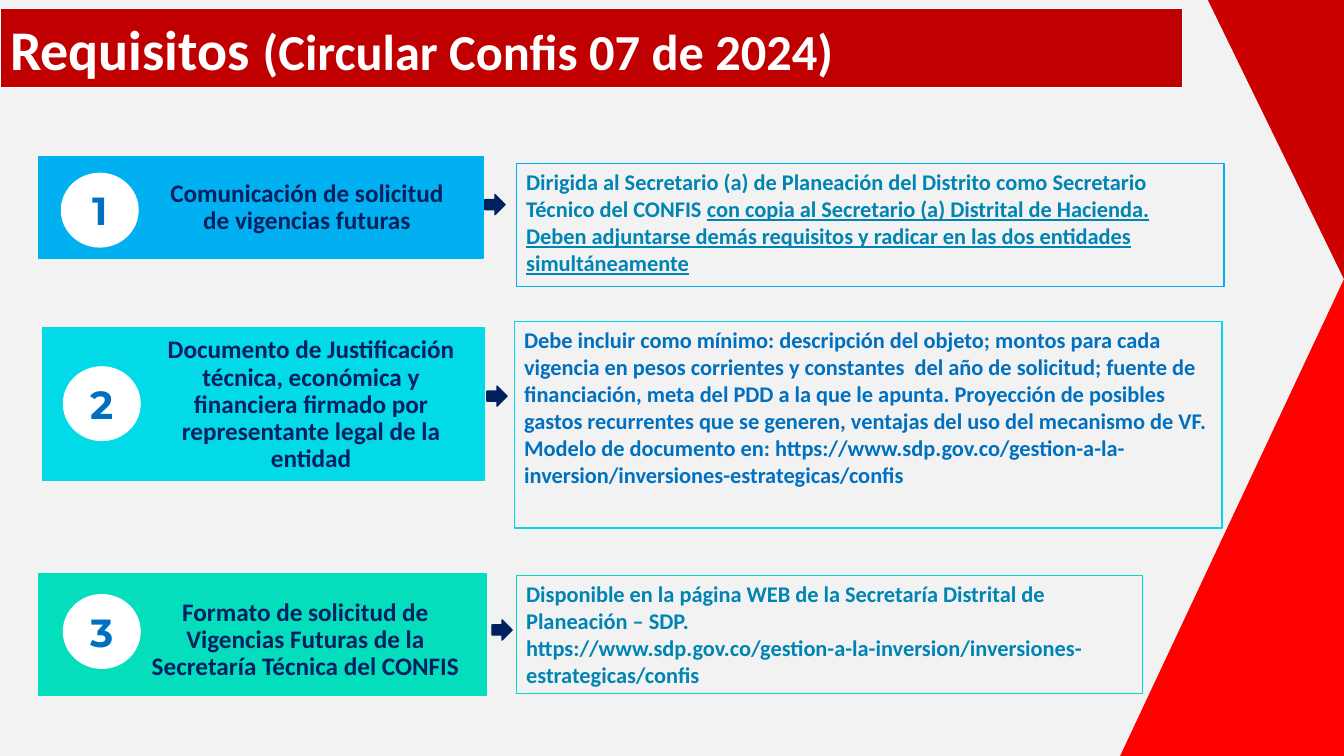
from pptx import Presentation
from pptx.dml.color import RGBColor
from pptx.enum.shapes import MSO_SHAPE
from pptx.enum.text import MSO_ANCHOR, MSO_AUTO_SIZE, PP_ALIGN
from pptx.util import Emu, Pt

PX = 9144  # 100 px to the inch

COLORS = {
    "background": "F2F2F2",
    "banner": "C00000",
    "upper_red": "CC0000",
    "lower_red": "FF0000",
    "white": "FFFFFF",
    "navy": "002060",
    "blue": "0070C0",
    "teal": "0084B4",
    "sky": "00B0F0",
    "cyan": "02DAE7",
    "mint": "04DEBD",
}

# Each detail is a list of paragraphs, each a list of (text, underlined) spans
REQUIREMENTS = [
    dict(
        number="1", color="sky", ink="teal",
        card=(38, 155, 441, 101), label=(150, 168, 305, 76),
        badge=(61, 172), arrow=(481, 193), frame=(512, 162, 702, 122),
        name="Comunicación de solicitud de vigencias futuras",
        detail=[
            [("Dirigida al Secretario (a) de Planeación del Distrito como "
              "Secretario Técnico del CONFIS ", False),
             ("con copia al Secretario (a) Distrital de Hacienda.", True)],
            [("Deben adjuntarse demás requisitos y radicar en las dos "
              "entidades simultáneamente", True)],
        ],
    ),
    dict(
        number="2", color="cyan", ink="blue",
        card=(42, 325, 438, 152), label=(152, 326, 309, 152),
        badge=(63, 364), arrow=(483, 383), frame=(510, 319, 702, 205),
        name="Documento de Justificación técnica, económica y financiera "
             "firmado por representante legal de la entidad",
        detail=[
            [("Debe incluir como mínimo: descripción del objeto; montos para "
              "cada vigencia en pesos corrientes y constantes  del año de "
              "solicitud; fuente de financiación, meta del PDD a la que le "
              "apunta. Proyección de posibles gastos recurrentes que se "
              "generen, ventajas del uso del mecanismo de VF.", False)],
            [("Modelo de documento en: https://www.sdp.gov.co/gestion-a-la-"
              "inversion/inversiones-estrategicas/confis", False)],
        ],
    ),
    dict(
        number="3", color="mint", ink="teal",
        card=(38, 569, 444, 121), label=(136, 571, 330, 129),
        badge=(63, 590), arrow=(488, 615), frame=(512, 571, 621, 117),
        name="Formato de solicitud de Vigencias Futuras de la Secretaría "
             "Técnica del CONFIS",
        detail=[
            [("Disponible en la página WEB de la Secretaría Distrital de "
              "Planeación – SDP.", False)],
            [("https://www.sdp.gov.co/gestion-a-la-inversion/inversiones-"
              "estrategicas/confis", False)],
        ],
    ),
]


def rgb(name):
    return RGBColor.from_string(COLORS[name])


def px(*lengths):
    return [Emu(length * PX) for length in lengths]


def style_font(font, size, color, family="Calibri"):
    font.name, font.size, font.bold = family, Pt(size), True
    font.color.rgb = rgb(color)


def add_block(page, kind, place, fill=None, line=None):
    block = page.shapes.add_shape(kind, *px(*place))
    block.shadow.inherit = False
    if fill:
        block.fill.solid()
        block.fill.fore_color.rgb = rgb(fill)
    else:
        block.fill.background()
    if line:
        block.line.color.rgb = rgb(line)
        block.line.width = Pt(1)
    else:
        block.line.fill.background()
    return block


def add_side_triangles(page):
    lower = add_block(page, MSO_SHAPE.RIGHT_TRIANGLE, (1111, 277, 222, 473), "lower_red")
    lower._element.spPr.get_or_add_xfrm().set("flipH", "1")
    upper = add_block(page, MSO_SHAPE.RIGHT_TRIANGLE, (1198, 0, 135, 277), "upper_red")
    upper.rotation = 180


def add_title(page):
    title = page.shapes.title
    title.left, title.top, title.width, title.height = px(0, 8, 1173, 79)
    title.fill.solid()
    title.fill.fore_color.rgb = rgb("banner")
    title.line.color.rgb = rgb("white")
    title.line.width = Pt(0.75)
    frame = title.text_frame
    frame.auto_size = MSO_AUTO_SIZE.NONE
    frame.vertical_anchor = MSO_ANCHOR.MIDDLE
    para = frame.paragraphs[0]
    para.alignment = PP_ALIGN.LEFT
    for text, size in (("Requisitos ", 40), ("(Circular Confis 07 de 2024)", 36)):
        span = para.add_run()
        span.text = text
        style_font(span.font, size, "white")


def add_label(page, place, text):
    box = page.shapes.add_textbox(*px(*place))
    frame = box.text_frame
    frame.word_wrap = True
    frame.vertical_anchor = MSO_ANCHOR.MIDDLE
    frame.margin_left, frame.margin_top, frame.margin_right, frame.margin_bottom = px(6, 0, 2, 0)
    para = frame.paragraphs[0]
    para.text = text
    para.alignment = PP_ALIGN.CENTER
    para.line_spacing = 0.9
    style_font(para.font, 18, "navy")


def add_badge(page, corner, number):
    badge = add_block(page, MSO_SHAPE.OVAL, (*corner, 76, 73), "white", "white")
    badge.text_frame.vertical_anchor = MSO_ANCHOR.MIDDLE
    para = badge.text_frame.paragraphs[0]
    para.text = number
    para.alignment = PP_ALIGN.CENTER
    style_font(para.font, 28, "blue", "Montserrat")


def add_detail(page, place, paragraphs, border, ink):
    box = add_block(page, MSO_SHAPE.RECTANGLE, place, line=border)
    frame = box.text_frame
    frame.word_wrap = True
    frame.vertical_anchor = MSO_ANCHOR.TOP
    for index, spans in enumerate(paragraphs):
        para = frame.add_paragraph() if index else frame.paragraphs[0]
        para.alignment = PP_ALIGN.LEFT
        style_font(para.font, 16, ink)
        for text, underlined in spans:
            span = para.add_run()
            span.text = text
            if underlined:
                span.font.underline = True


def add_requirement(page, item):
    color = item["color"]
    add_block(page, MSO_SHAPE.RECTANGLE, item["card"], color, color)
    add_label(page, item["label"], item["name"])
    add_badge(page, item["badge"], item["number"])
    add_detail(page, item["frame"], item["detail"], color, item["ink"])
    add_block(page, MSO_SHAPE.RIGHT_ARROW, (*item["arrow"], 20, 20), "navy", "navy")


def main():
    deck = Presentation()
    deck.slide_width, deck.slide_height = px(1333, 750)
    page = deck.slides.add_slide(deck.slide_layouts[5])
    page.background.fill.solid()
    page.background.fill.fore_color.rgb = rgb("background")

    # Banner and red edge
    add_title(page)
    add_side_triangles(page)

    # Numbered requirements
    for item in REQUIREMENTS:
        add_requirement(page, item)

    deck.save("out.pptx")


if __name__ == "__main__":
    main()
